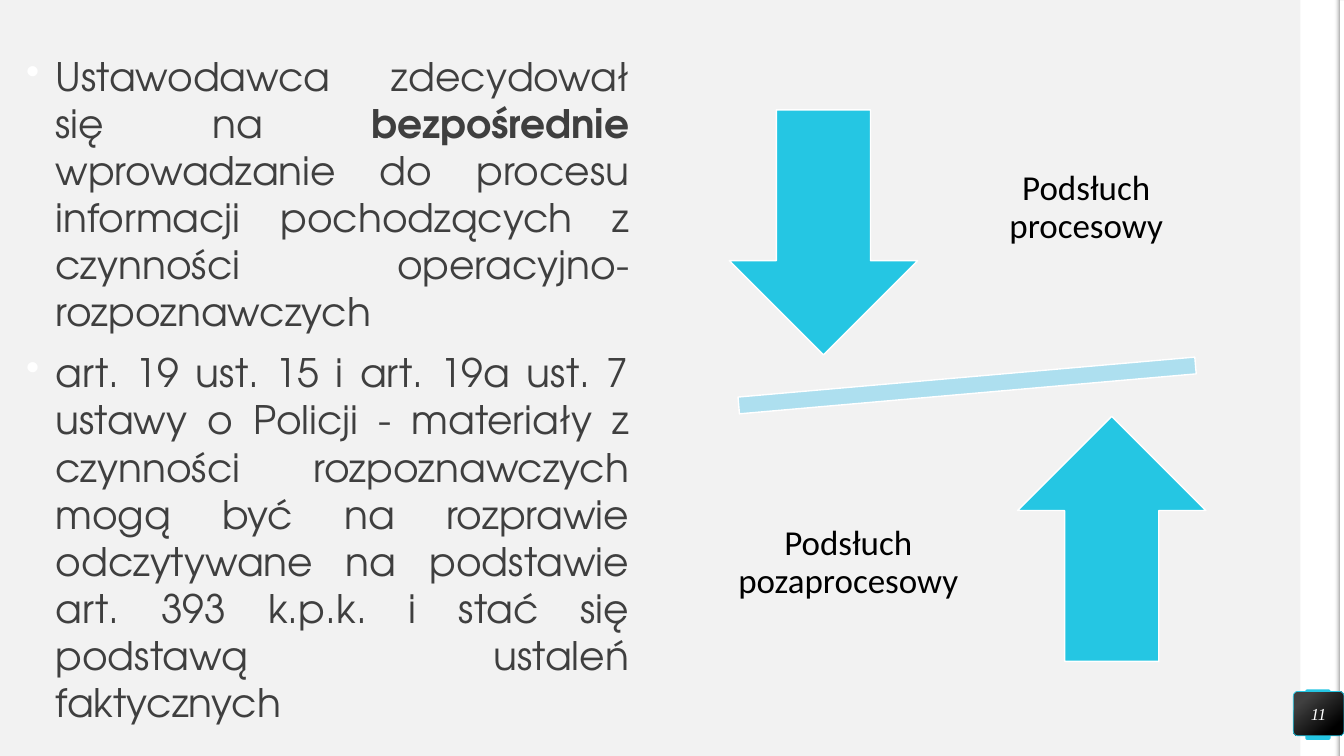
from lxml import etree
from pptx import Presentation
from pptx import util as u
from pptx.dml.color import RGBColor
from pptx.enum import shapes, text
from pptx.oxml import ns

BACKGROUND = RGBColor(0xF2, 0xF2, 0xF2)
WHITE = RGBColor(0xFF, 0xFF, 0xFF)
BLACK = RGBColor(0, 0, 0)
BODY_GREY = RGBColor(0x3F, 0x3F, 0x3F)
BADGE_GREY = RGBColor(0x40, 0x40, 0x40)
EDGE_GREY = RGBColor(0xA6, 0xA6, 0xA6)
CYAN = RGBColor(0x25, 0xC6, 0xE3)
PALE_CYAN = RGBColor(0xAD, 0xDF, 0xEF)

ARGUMENTS = [
    [("Ustawodawca zdecydował się na ", False),
     ("bezpośrednie ", True),
     ("wprowadzanie do procesu informacji pochodzących z czynności "
      "operacyjno-rozpoznawczych", False)],
    [("art. 19 ust. 15 i art. 19a ust. 7 ustawy o Policji - materiały z "
      "czynności rozpoznawczych mogą być na rozprawie odczytywane na "
      "podstawie art. 393 k.p.k. i stać się podstawą ustaleń faktycznych ", False)],
]
WIRETAPS = [
    ("Podsłuch procesowy", (704.2, 56.9, 143.3, 183.6)),
    ("Podsłuch pozaprocesowy", (510.5, 310.3, 190.8, 183.6)),
]
PAGE_NUMBER = "11"

BODY_FONT = {"name": "TeX Gyre Adventor", "size": u.Pt(28)}
LABEL_FONT = {"name": "Calibri", "size": u.Pt(25)}
NUMBER_FONT = {"name": "Times New Roman", "size": u.Pt(12), "italic": True}
ARROW_SIZE = (134.6, 175)
BULLET_INDENT = u.Pt(21)

KIND = shapes.MSO_SHAPE
deck = Presentation()
deck.slide_width, deck.slide_height = u.Pt(960), u.Pt(540)
slide = deck.slides.add_slide(deck.slide_layouts[6])
slide.background.fill.solid()
slide.background.fill.fore_color.rgb = BACKGROUND


def add_figure(kind, box, color=None, outline=None, width=1, rotation=0, corner=None):
    figure = slide.shapes.add_shape(kind, *map(u.Pt, box))
    figure.shadow.inherit = False
    figure.rotation = rotation
    if corner is not None:
        figure.adjustments[0] = corner
    if color is not None:
        figure.fill.solid()
        figure.fill.fore_color.rgb = color
    if outline is None:
        figure.line.fill.background()
    else:
        figure.line.color.rgb = outline
        figure.line.width = u.Pt(width)
    return figure


def shade(figure, stops, angle):
    figure.fill.gradient()
    figure.fill.gradient_angle = angle
    for stop, (position, color) in zip(figure.fill.gradient_stops, stops):
        stop.position = position
        stop.color.rgb = color


def set_frame(frame, inset=0, anchor=text.MSO_ANCHOR.MIDDLE):
    frame.word_wrap = True
    frame.vertical_anchor = anchor
    for side in ("left", "top", "right", "bottom"):
        setattr(frame, f"margin_{side}", u.Pt(inset))
    return frame


def write(paragraph, wording, font, color, bold=False):
    run = paragraph.add_run()
    run.text = wording
    for key, value in {**font, "bold": bold}.items():
        setattr(run.font, key, value)
    run.font.color.rgb = color


def add_bullet(paragraph):
    properties = paragraph._p.get_or_add_pPr()
    properties.set("marL", str(BULLET_INDENT))
    properties.set("indent", str(-BULLET_INDENT))
    bullet_color = etree.SubElement(properties, ns.qn("a:buClr"))
    etree.SubElement(bullet_color, ns.qn("a:srgbClr"), val=str(WHITE))
    etree.SubElement(properties, ns.qn("a:buChar"), char="•")


add_figure(KIND.RECTANGLE, (928.8, 0, 28.1, 540), WHITE)
add_figure(KIND.ROUNDED_RECTANGLE, (932.4, 492.5, 18, 36), CYAN, corner=0.07)
add_figure(KIND.RECTANGLE, (688.3, 268.6, 540, 3.6), WHITE, rotation=90)
edge = add_figure(KIND.RECTANGLE, (684.7, 268.6, 540, 3.6), rotation=90)
shade(edge, [(0, BACKGROUND), (1, EDGE_GREY)], 90)
clear_stop = next(edge._element.iter(ns.qn("a:srgbClr")))
etree.SubElement(clear_stop, ns.qn("a:alpha"), val="0")

body = slide.shapes.add_textbox(*map(u.Pt, (18.7, 37.4, 430.6, 436.3)))
body_frame = set_frame(body.text_frame, anchor=text.MSO_ANCHOR.TOP)
for index, argument in enumerate(ARGUMENTS):
    paragraph = body_frame.add_paragraph() if index else body_frame.paragraphs[0]
    paragraph.alignment = text.PP_ALIGN.JUSTIFY
    paragraph.space_before = u.Pt(4 if index else 0)
    paragraph.space_after = u.Pt(6)
    add_bullet(paragraph)
    for wording, bold in argument:
        write(paragraph, wording, BODY_FONT, BODY_GREY, bold)

badge = add_figure(KIND.ROUNDED_RECTANGLE, (923.8, 493.9, 36.2, 31.7),
                   outline=CYAN, width=0.5, corner=0.1)
shade(badge, [(0.2, BADGE_GREY), (0.82, BLACK)], 310)
number = set_frame(badge.text_frame).paragraphs[0]
number.alignment = text.PP_ALIGN.CENTER
write(number, PAGE_NUMBER, NUMBER_FONT, WHITE)

add_figure(KIND.MATH_MINUS, (468, 249.8, 445.7, 51.1), PALE_CYAN, WHITE, rotation=355)
add_figure(KIND.DOWN_ARROW, (520.9, 78.5, *ARROW_SIZE), CYAN, WHITE)
add_figure(KIND.UP_ARROW, (726.8, 297.4, *ARROW_SIZE), CYAN, WHITE)
for wiretap, box in WIRETAPS:
    label = slide.shapes.add_textbox(*map(u.Pt, box))
    caption = set_frame(label.text_frame, inset=13.7).paragraphs[0]
    caption.alignment = text.PP_ALIGN.CENTER
    caption.line_spacing = 0.9
    write(caption, wiretap, LABEL_FONT, BLACK)

deck.save("out.pptx")
